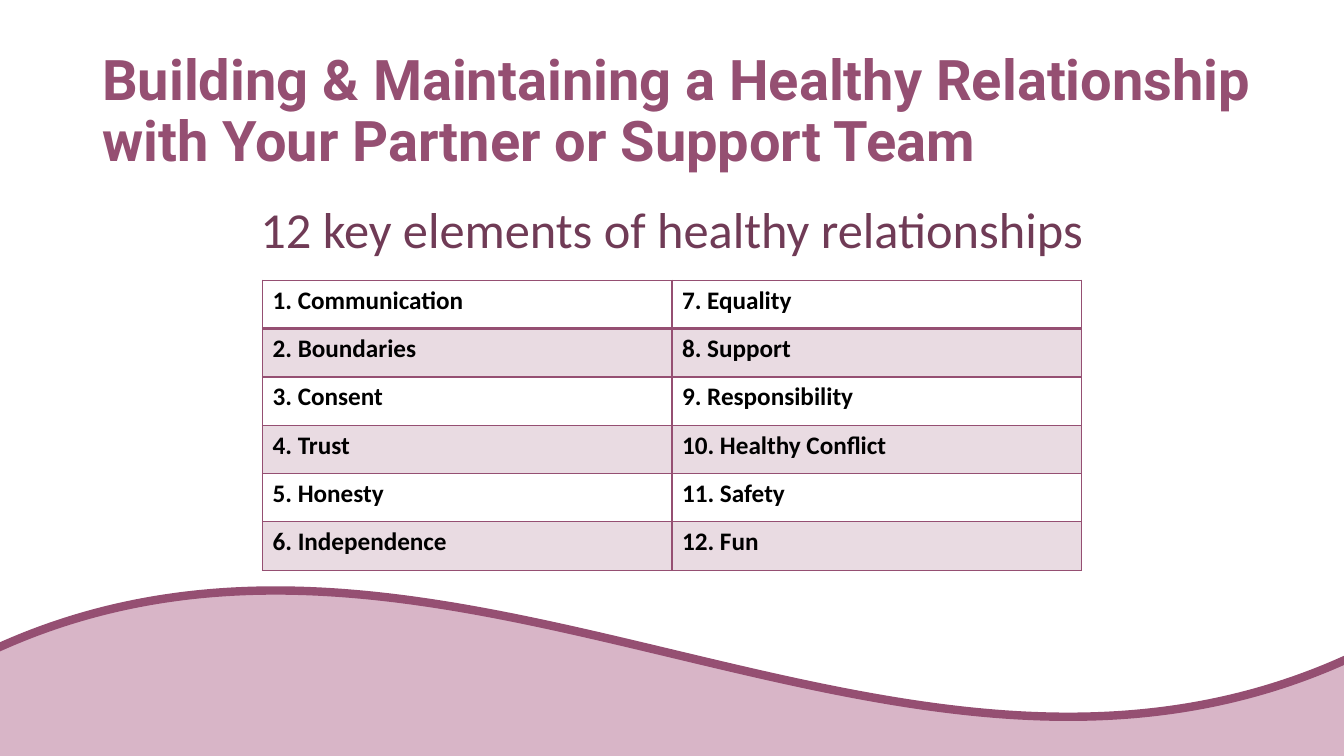
from dataclasses import dataclass

from lxml import etree
from pptx import Presentation
from pptx.dml.color import RGBColor
from pptx.enum.shapes import MSO_SHAPE
from pptx.enum.text import MSO_ANCHOR, PP_ALIGN
from pptx.oxml.ns import qn
from pptx.slide import Slide
from pptx.table import _Cell
from pptx.text.text import _Paragraph
from pptx.util import Emu, Pt

WAVE = MSO_SHAPE.WAVE
TOP, MIDDLE = MSO_ANCHOR.TOP, MSO_ANCHOR.MIDDLE
LEFT, CENTER = PP_ALIGN.LEFT, PP_ALIGN.CENTER
BLANK_LAYOUT = 6
EMU_PER_PX = 9525


@dataclass(frozen=True)
class Theme:
    plum: str = "954F72"
    dark_plum: str = "703B56"
    pink: str = "D8B5C7"
    black: str = "000000"
    band_alpha: int = 20
    heading_font: str = "Roboto"
    body_font: str = "Calibri"
    title_size: int = 40
    subtitle_size: int = 36
    table_size: int = 18
    wave_line: int = 6
    border: int = 1
    header_border: int = 2


@dataclass(frozen=True)
class Box:
    left: int
    top: int
    width: int
    height: int

    def emu(self) -> tuple[Emu, Emu, Emu, Emu]:
        return px(self.left), px(self.top), px(self.width), px(self.height)


@dataclass(frozen=True)
class TextStyle:
    font: str
    size: int
    color: str
    bold: bool = False


@dataclass(frozen=True)
class TextBlock:
    text: str
    box: Box
    style: TextStyle
    line_spacing: float
    anchor: MSO_ANCHOR = TOP
    alignment: PP_ALIGN = LEFT


THEME = Theme()
WAVE_BOX = Box(-14, 560, 1308, 500)
TABLE_BOX = Box(250, 267, 780, 276)
TABLE_STYLE = TextStyle(THEME.body_font, THEME.table_size, THEME.black, True)
TEXT_BLOCKS = (
    TextBlock(
        "Building & Maintaining a Healthy Relationship with Your Partner or Support Team",
        Box(88, 38, 1174, 139),
        TextStyle(THEME.heading_font, THEME.title_size, THEME.plum, True),
        0.9,
        anchor=MIDDLE,
    ),
    TextBlock(
        "12 key elements of healthy relationships",
        Box(88, 178, 1104, 325),
        TextStyle(THEME.body_font, THEME.subtitle_size, THEME.dark_plum),
        1.1,
        alignment=CENTER,
    ),
)
ELEMENTS = (
    "Communication", "Boundaries", "Consent", "Trust", "Honesty", "Independence",
    "Equality", "Support", "Responsibility", "Healthy Conflict", "Safety", "Fun",
)
COLUMN_COUNT = 2
ROW_COUNT = len(ELEMENTS) // COLUMN_COUNT


def px(length: int) -> Emu:
    return Emu(length * EMU_PER_PX)


def rgb(color: str) -> RGBColor:
    return RGBColor.from_string(color)


def add_run(paragraph: _Paragraph, text: str, style: TextStyle) -> None:
    run = paragraph.add_run()
    run.text = text
    run.font.name = style.font
    run.font.size = Pt(style.size)
    run.font.bold = style.bold
    run.font.color.rgb = rgb(style.color)


def add_wave(slide: Slide) -> None:
    shape = slide.shapes.add_shape(WAVE, *WAVE_BOX.emu())
    shape.shadow.inherit = False
    shape.fill.solid()
    shape.fill.fore_color.rgb = rgb(THEME.pink)
    shape.line.color.rgb = rgb(THEME.plum)
    shape.line.width = Pt(THEME.wave_line)


def add_text_block(slide: Slide, block: TextBlock) -> None:
    frame = slide.shapes.add_textbox(*block.box.emu()).text_frame
    frame.word_wrap = True
    frame.vertical_anchor = block.anchor
    paragraph = frame.paragraphs[0]
    paragraph.alignment = block.alignment
    paragraph.line_spacing = block.line_spacing
    add_run(paragraph, block.text, block.style)


def fill_band(cell: _Cell) -> None:
    """Tint the cell with transparent plum."""
    cell.fill.solid()
    cell.fill.fore_color.rgb = rgb(THEME.plum)
    color = cell._tc.tcPr.find(f"{qn('a:solidFill')}/{qn('a:srgbClr')}")
    etree.SubElement(color, qn("a:alpha"), val=str(THEME.band_alpha * 1000))


def set_borders(cell: _Cell, top: int, bottom: int) -> None:
    """Draw all four borders; the side borders have the normal width."""
    properties = cell._tc.get_or_add_tcPr()
    widths = {"lnL": THEME.border, "lnR": THEME.border, "lnT": top, "lnB": bottom}
    for position, (side, width) in enumerate(widths.items()):
        line = etree.Element(qn(f"a:{side}"), w=str(Pt(width)))
        fill = etree.SubElement(line, qn("a:solidFill"))
        etree.SubElement(fill, qn("a:srgbClr"), val=THEME.plum)
        properties.insert(position, line)


def add_elements_table(slide: Slide) -> None:
    table = slide.shapes.add_table(ROW_COUNT, COLUMN_COUNT, *TABLE_BOX.emu()).table
    table.first_row = False
    table.horz_banding = False
    for index, element in enumerate(ELEMENTS):
        column, row = divmod(index, ROW_COUNT)
        cell = table.cell(row, column)
        add_run(cell.text_frame.paragraphs[0], f"{index + 1}. {element}", TABLE_STYLE)
        if row % 2:
            fill_band(cell)
        else:
            cell.fill.background()
        set_borders(
            cell,
            top=THEME.header_border if row == 1 else THEME.border,
            bottom=THEME.header_border if row == 0 else THEME.border,
        )


def main() -> None:
    presentation = Presentation()
    presentation.slide_width = px(1280)
    presentation.slide_height = px(720)
    slide = presentation.slides.add_slide(presentation.slide_layouts[BLANK_LAYOUT])
    add_wave(slide)
    for block in TEXT_BLOCKS:
        add_text_block(slide, block)
    add_elements_table(slide)
    presentation.save("out.pptx")


if __name__ == "__main__":
    main()
